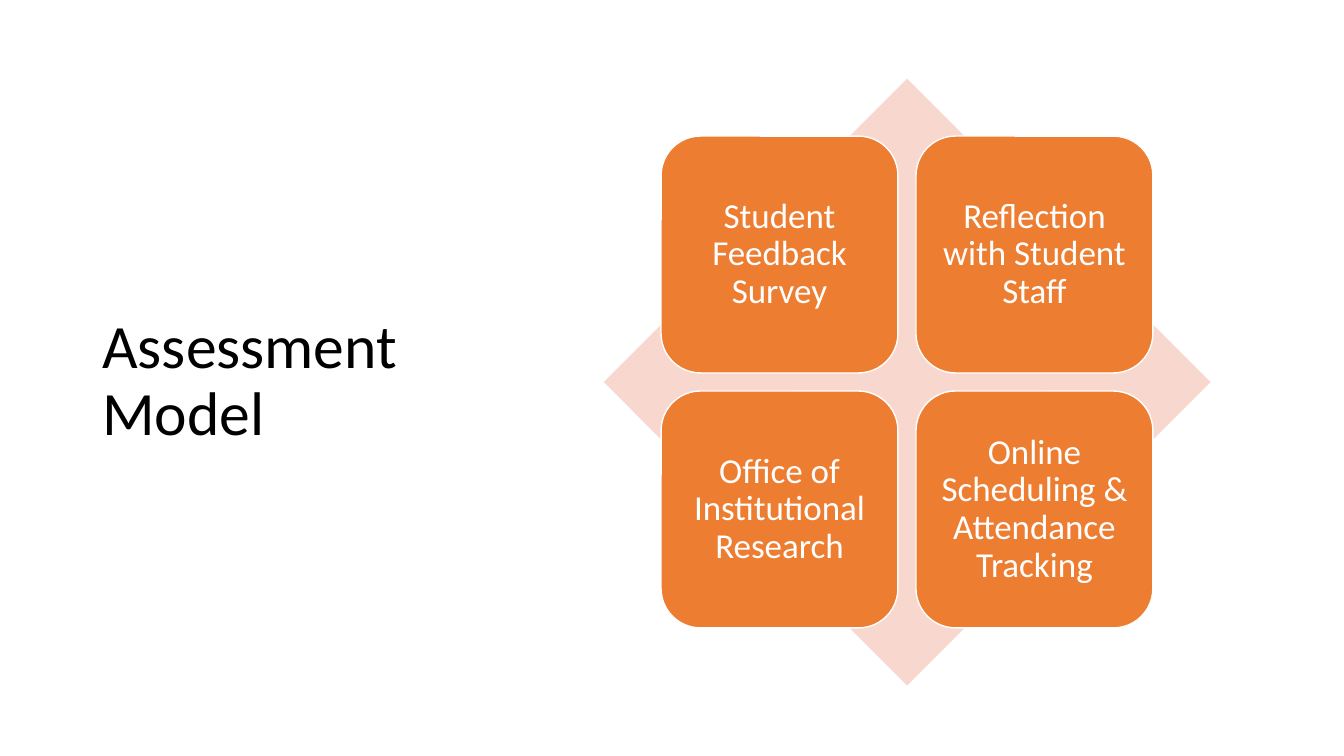
"""Build the Assessment Model slide: a title beside four tiles on a diamond."""
from dataclasses import dataclass

from pptx import Presentation
from pptx.dml.color import RGBColor
from pptx.enum.shapes import MSO_SHAPE as Kind
from pptx.enum.text import MSO_ANCHOR as Anchor, PP_ALIGN as Align
from pptx.shapes.autoshape import Shape
from pptx.slide import Slide
from pptx.util import Pt

SIDE = 169.2
STEP = 182.1
LEFT, TOP = 472.2, 97.2


@dataclass
class Tile:
    text: str
    row: int
    col: int


TILES = [
    Tile("Student Feedback Survey", 0, 0),
    Tile("Reflection with Student Staff", 0, 1),
    Tile("Office of Institutional Research", 1, 0),
    Tile("Online Scheduling & Attendance Tracking", 1, 1),
]


def color(code: str) -> RGBColor:
    return RGBColor.from_string(code)


def write(shape: Shape, text: str, size: float, code: str, align: Align, pad: float) -> None:
    frame = shape.text_frame
    look = {
        "word_wrap": True,
        "vertical_anchor": Anchor.MIDDLE,
        "margin_left": Pt(7.2),
        "margin_right": Pt(7.2),
        "margin_top": Pt(pad),
        "margin_bottom": Pt(pad),
    }
    for name, value in look.items():
        setattr(frame, name, value)
    para = frame.paragraphs[0]
    para.alignment = align
    para.line_spacing = 0.9
    run = para.add_run()
    run.text = text
    for name, value in {"name": "Calibri", "size": Pt(size)}.items():
        setattr(run.font, name, value)
    run.font.color.rgb = color(code)


def draw(slide: Slide, kind: Kind, left: float, top: float, side: float, fill: str) -> Shape:
    shape = slide.shapes.add_shape(kind, Pt(left), Pt(top), Pt(side), Pt(side))
    shape.shadow.inherit = False
    shape.fill.solid()
    shape.fill.fore_color.rgb = color(fill)
    shape.line.fill.background()
    return shape


def place(slide: Slide, tile: Tile) -> None:
    left, top = LEFT + tile.col * STEP, TOP + tile.row * STEP
    shape = draw(slide, Kind.ROUNDED_RECTANGLE, left, top, SIDE, "ED7D31")
    shape.line.color.rgb = color("FFFFFF")
    shape.line.width = Pt(1)
    write(shape, tile.text, 25, "FFFFFF", Align.CENTER, 7.2)


def main() -> None:
    deck = Presentation()
    deck.slide_width, deck.slide_height = Pt(960), Pt(540)
    slide = deck.slides.add_slide(deck.slide_layouts[6])
    title = slide.shapes.add_textbox(Pt(66), Pt(56.2), Pt(265.8), Pt(433.4))
    write(title, "Assessment Model", 44, "000000", Align.LEFT, 3.6)
    draw(slide, Kind.DIAMOND, 431.3, 56.2, 433.4, "F8D7CE")
    for tile in TILES:
        place(slide, tile)
    deck.save("out.pptx")


if __name__ == "__main__":
    main()
